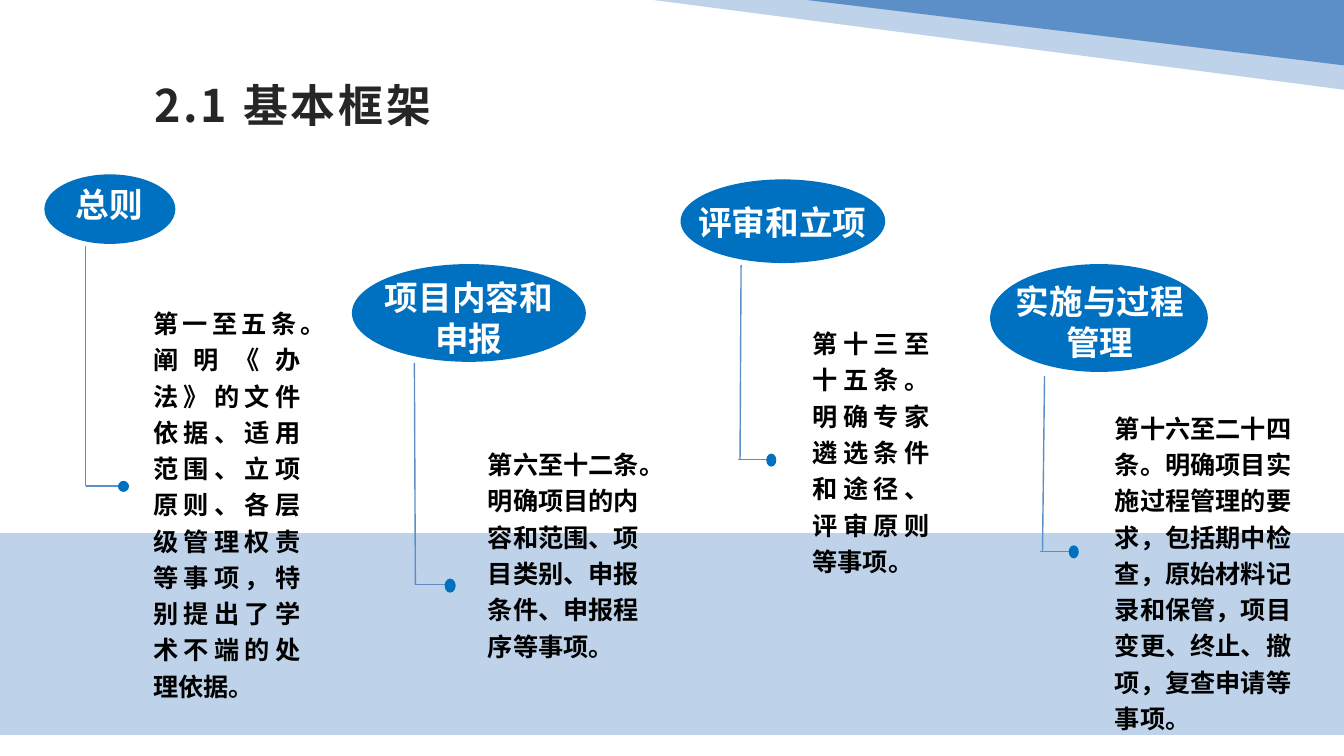
from dataclasses import dataclass

from lxml.etree import SubElement
from pptx import Presentation
from pptx.dml.color import RGBColor
from pptx.enum.lang import MSO_LANGUAGE_ID as Language
from pptx.enum.shapes import MSO_CONNECTOR as Connector, MSO_SHAPE as Shape
from pptx.enum.text import MSO_ANCHOR as Anchor, MSO_AUTO_SIZE as AutoSize, PP_ALIGN as Align
from pptx.oxml.ns import qn
from pptx.util import Inches, Pt


@dataclass(frozen=True)
class Theme:
    font: str = "Noto Sans CJK SC"
    pale: RGBColor = RGBColor(0xBE, 0xD2, 0xE9)
    line: RGBColor = RGBColor(0x5C, 0x8F, 0xC7)
    accent: RGBColor = RGBColor(0x00, 0x71, 0xC1)
    title_color: RGBColor = RGBColor(0x26, 0x26, 0x26)
    white: RGBColor = RGBColor(0xFF, 0xFF, 0xFF)
    black: RGBColor = RGBColor(0, 0, 0)
    title_size: int = 32
    label_size: int = 24
    body_size: int = 18


THEME = Theme()
FOOT_LENGTH = 0.32

# Boxes are left, top, width, height; a stem runs x1, y1, x2, y2; a foot starts at x, y.
SECTIONS = [
    {"label": "总则", "label_align": Align.LEFT, "body_align": Align.JUSTIFY,
     "oval": (0.44, 1.73, 1.3, 0.69), "label_box": (0.65, 1.78, 0.93, 0.5),
     "stem": (0.85, 2.44, 0.85, 4.82), "foot": (0.85, 4.82),
     "dot": (1.17, 4.77, 0.11, 0.11), "body_box": (1.42, 2.95, 1.66, 3.73),
     "body": "第一至五条。阐明《办法》的文件依据、适用范围、立项原则、各层级管理权责等事项，"
             "特别提出了学术不端的处理依据。"},
    {"label": "项目内容和申报", "label_align": Align.CENTER, "body_align": Align.LEFT,
     "oval": (3.49, 2.62, 2.32, 0.97), "label_box": (3.62, 2.7, 2.06, 0.91),
     "stem": (4.11, 3.6, 4.12, 5.8), "foot": (4.12, 5.8),
     "dot": (4.41, 5.74, 0.11, 0.14), "body_box": (4.74, 4.35, 1.73, 2.28),
     "body": "第六至十二条。明确项目的内容和范围、项目类别、申报条件、申报程序等事项。"},
    {"label": "评审和立项", "label_align": Align.CENTER, "body_align": Align.JUSTIFY,
     "oval": (6.75, 1.78, 2.03, 0.83), "label_box": (6.6, 1.95, 2.32, 0.5),
     "stem": (7.35, 2.63, 7.34, 4.56), "foot": (7.32, 4.56),
     "dot": (7.6, 4.5, 0.1, 0.13), "body_box": (7.96, 3.15, 1.36, 2.64),
     "body": "第十三至十五条。明确专家遴选条件和途径、评审原则等事项。"},
    {"label": "实施与过程管理", "label_align": Align.CENTER, "body_align": Align.LEFT,
     "oval": (9.82, 2.62, 2.16, 1.07), "label_box": (9.82, 2.74, 2.18, 0.91),
     "stem": (10.36, 3.73, 10.34, 5.47), "foot": (10.32, 5.47),
     "dot": (10.6, 5.41, 0.1, 0.13), "body_box": (10.96, 3.99, 2.04, 3.37),
     "body": "第十六至二十四条。明确项目实施过程管理的要求，包括期中检查，原始材料记录和保管，"
             "项目变更、终止、撤项，复查申请等事项。"},
]


def set_format(target, values):
    for name, value in values.items():
        setattr(target, name, value)


def paint(shape, color):
    """Give the shape a flat fill without outline or shadow."""
    shape.shadow.inherit = False
    shape.fill.solid()
    shape.fill.fore_color.rgb = color
    shape.line.fill.background()


def add_filled(slide, kind, box, color):
    shape = slide.shapes.add_shape(kind, *map(Inches, box))
    paint(shape, color)
    return shape


def add_line(slide, *ends):
    line = slide.shapes.add_connector(Connector.STRAIGHT, *map(Inches, ends))
    line.line.color.rgb = THEME.line
    line.line.width = Pt(1)
    SubElement(line._element.spPr, qn("a:effectLst"))


def add_text(slide, box, text, size, color, frame_format=None, paragraph_format=None):
    frame = slide.shapes.add_textbox(*map(Inches, box)).text_frame
    set_format(frame, {"word_wrap": True, "auto_size": AutoSize.SHAPE_TO_FIT_TEXT,
                       **(frame_format or {})})
    paragraph = frame.paragraphs[0]
    set_format(paragraph, paragraph_format or {})
    run = paragraph.add_run()
    run.text = text
    set_format(run.font, {"size": Pt(size), "bold": True, "name": THEME.font,
                          "language_id": Language.SIMPLIFIED_CHINESE})
    run.font.color.rgb = color
    properties = run._r.get_or_add_rPr()
    SubElement(properties, qn("a:ea"), typeface=THEME.font)
    return properties


def add_backdrop(slide):
    points = [(Inches(x), Inches(y)) for x, y in
              [(13.33, 0.89), (13.33, 0.06), (10, 0), (6.48, 0)]]
    builder = slide.shapes.build_freeform(*points[0])
    builder.add_line_segments(points[1:], close=True)
    paint(builder.convert_to_shape(), THEME.pale)

    corner = add_filled(slide, Shape.ISOSCELES_TRIANGLE, (8, 0, 5.34, 0.65), THEME.line)
    corner.adjustments[0] = 1
    corner._element.spPr.xfrm.set("flipV", "1")
    add_filled(slide, Shape.RECTANGLE, (0, 5.29, 13.33, 2), THEME.pale)


def add_title(slide, text):
    properties = add_text(
        slide, (1.42, 0.65, 11.39, 0.78), text, THEME.title_size, THEME.title_color,
        {"auto_size": AutoSize.NONE, "vertical_anchor": Anchor.MIDDLE,
         "margin_left": Inches(0.11), "margin_right": Inches(0.08),
         "margin_top": Inches(0.04), "margin_bottom": Inches(0.04)})
    properties.set("spc", "200")


def add_section(slide, section):
    """Draw one labelled oval with its elbow line, dot and description."""
    add_filled(slide, Shape.OVAL, section["oval"], THEME.accent)
    add_text(slide, section["label_box"], section["label"], THEME.label_size, THEME.white,
             paragraph_format={"alignment": section["label_align"]})
    add_line(slide, *section["stem"])
    x, y = section["foot"]
    add_line(slide, x, y, x + FOOT_LENGTH, y)
    add_filled(slide, Shape.OVAL, section["dot"], THEME.accent)
    add_text(slide, section["body_box"], section["body"], THEME.body_size, THEME.black,
             paragraph_format={"alignment": section["body_align"], "line_spacing": 1.2})


def main():
    presentation = Presentation()
    set_format(presentation, {"slide_width": Inches(13.33), "slide_height": Inches(7.5)})
    slide = presentation.slides.add_slide(presentation.slide_layouts[6])
    add_backdrop(slide)
    add_title(slide, "2.1 基本框架")
    for section in SECTIONS:
        add_section(slide, section)
    presentation.save("out.pptx")


if __name__ == "__main__":
    main()
